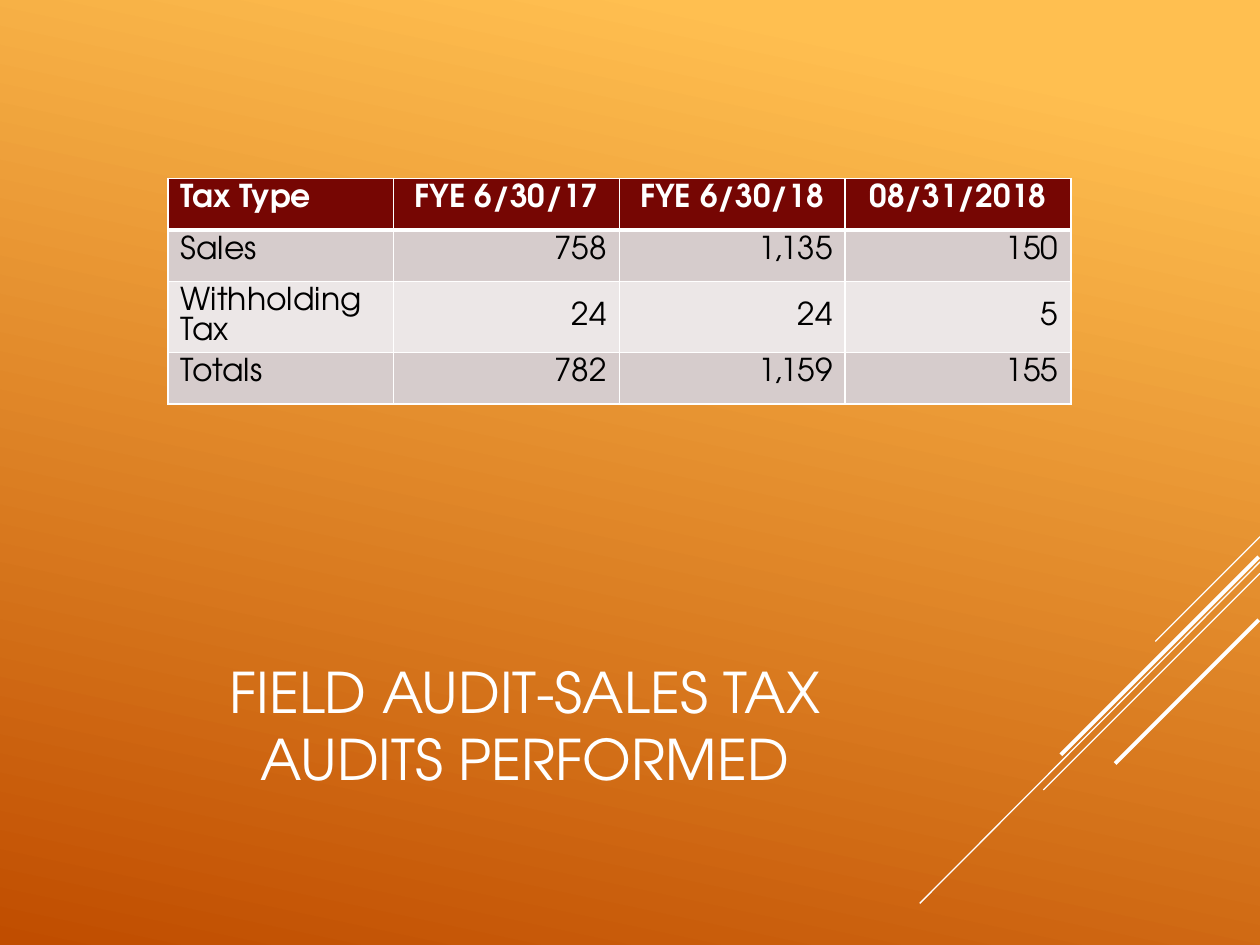
import pptx
import pptx.dml.color
import pptx.enum.text
import pptx.oxml
import pptx.oxml.ns
import pptx.util
from lxml import etree

Pt = pptx.util.Pt
ALIGN = pptx.enum.text.PP_ALIGN
ANCHOR = pptx.enum.text.MSO_ANCHOR
COLOURS = {
    "white": "FFFFFF",
    "black": "000000",
    "amber": "FFBF50",
    "rust": "C04D00",
    "maroon": "760603",
    "band": "D6CCCC",
    "pale band": "ECE7E7",
}
ROWS = [
    ["Tax Type", "FYE 6/30/17", "FYE 6/30/18", "08/31/2018"],
    ["Sales", "758", "1,135", "150"],
    ["Withholding Tax", "24", "24", "5"],
    ["Totals", "782", "1,159", "155"],
]
ROW_HEIGHTS = [29.5, 29.5, 40.5, 29.5]
# Start x, start y, end x, end y, width
STRIPES = [
    (720, 306.7, 660.2, 366.5, 0.75),
    (720, 321.1, 525.6, 516.2, 0.75),
    (720, 327.6, 596.2, 451.4, 0.75),
    (719.3, 318.2, 606.2, 431.3, 2.25),
    (719.3, 354.2, 637.2, 436.3, 2.25),
]


def colour(name):
    return pptx.dml.color.RGBColor.from_string(COLOURS[name])


class Painter:
    """Holds the text style and the page being drawn."""

    font = "TeX Gyre Adventor"

    def __init__(self, page):
        self.page = page

    def background(self, first, last, angle):
        fill = self.page.background.fill
        fill.gradient()
        fill.gradient_angle = 360 - angle
        for stop, name, position in zip(fill.gradient_stops, (first, last), (0.1, 1)):
            stop.color.rgb = colour(name)
            stop.position = position

    def format(self, para, size, name, align, spacing, bold=False):
        para.alignment = align
        para.line_spacing = Pt(spacing)
        para.font.name = self.font
        para.font.size = Pt(size)
        para.font.bold = bold
        para.font.color.rgb = colour(name)

    def title(self, text, left, top, width, height):
        box = self.page.shapes.title
        box.left, box.top, box.width, box.height = map(Pt, (left, top, width, height))
        frame = box.text_frame
        frame.vertical_anchor = ANCHOR.MIDDLE
        frame.word_wrap = True
        para = frame.paragraphs[0]
        para.text = text
        self.format(para, 32, "white", ALIGN.CENTER, 38.3)

    def line(self, x1, y1, x2, y2, width):
        line = self.page.shapes.add_connector(
            pptx.enum.shapes.MSO_CONNECTOR.STRAIGHT, Pt(x1), Pt(y1), Pt(x2), Pt(y2)
        )
        line.line.color.rgb = colour("white")
        line.line.width = Pt(width)
        etree.SubElement(line._element.spPr, pptx.oxml.ns.qn("a:effectLst"))

    def borders(self, cell, **widths):
        """Draw white borders; widths are given per side as L, R, T and B."""
        properties = cell._tc.get_or_add_tcPr()
        for index, (side, width) in enumerate(widths.items()):
            border = pptx.oxml.parse_xml(
                f'<a:ln{side} {pptx.oxml.ns.nsdecls("a")} w="{Pt(width)}"><a:solidFill>'
                f'<a:srgbClr val="{COLOURS["white"]}"/></a:solidFill></a:ln{side}>'
            )
            properties.insert(index, border)

    def table(self, rows, heights, left, top, width):
        table = self.page.shapes.add_table(
            len(rows), len(rows[0]), Pt(left), Pt(top), Pt(width), Pt(sum(heights))
        ).table
        for column in table.columns:
            column.width = Pt(width / len(rows[0]))
        for r, (texts, height) in enumerate(zip(rows, heights)):
            table.rows[r].height = Pt(height)
            header = r == 0
            fill = "maroon" if header else ("band" if r % 2 else "pale band")
            for c, text in enumerate(texts):
                cell = table.cell(r, c)
                cell.fill.solid()
                cell.fill.fore_color.rgb = colour(fill)
                if r == 2 and c > 0:
                    cell.vertical_anchor = ANCHOR.MIDDLE
                self.borders(cell, L=1, R=1, T=3 if r == 1 else 1, B=3 if header else 1)
                para = cell.text_frame.paragraphs[0]
                para.text = text
                align = ALIGN.LEFT if c == 0 else ALIGN.CENTER if header else ALIGN.RIGHT
                self.format(para, 18, "white" if header else "black", align, 16.65, header)


def main():
    deck = pptx.Presentation()
    deck.slide_width, deck.slide_height = Pt(720), Pt(540)
    painter = Painter(deck.slides.add_slide(deck.slide_layouts[5]))
    painter.background("amber", "rust", 102)
    for stripe in STRIPES:
        painter.line(*stripe)
    painter.title("FIELD AUDIT-SALES TAX\vAUDITS PERFORMED", 42, 354, 516, 120)
    painter.table(ROWS, ROW_HEIGHTS, 96, 102, 516)
    deck.save("out.pptx")


if __name__ == "__main__":
    main()
